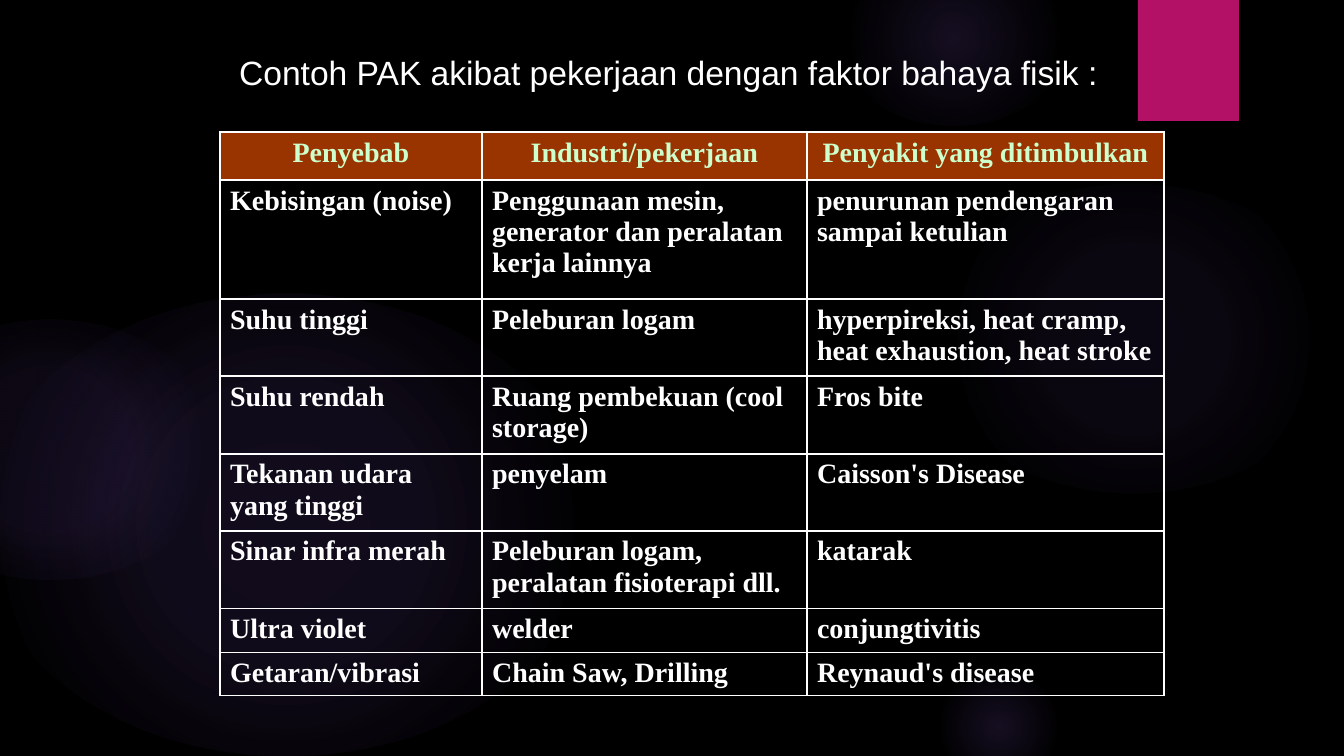
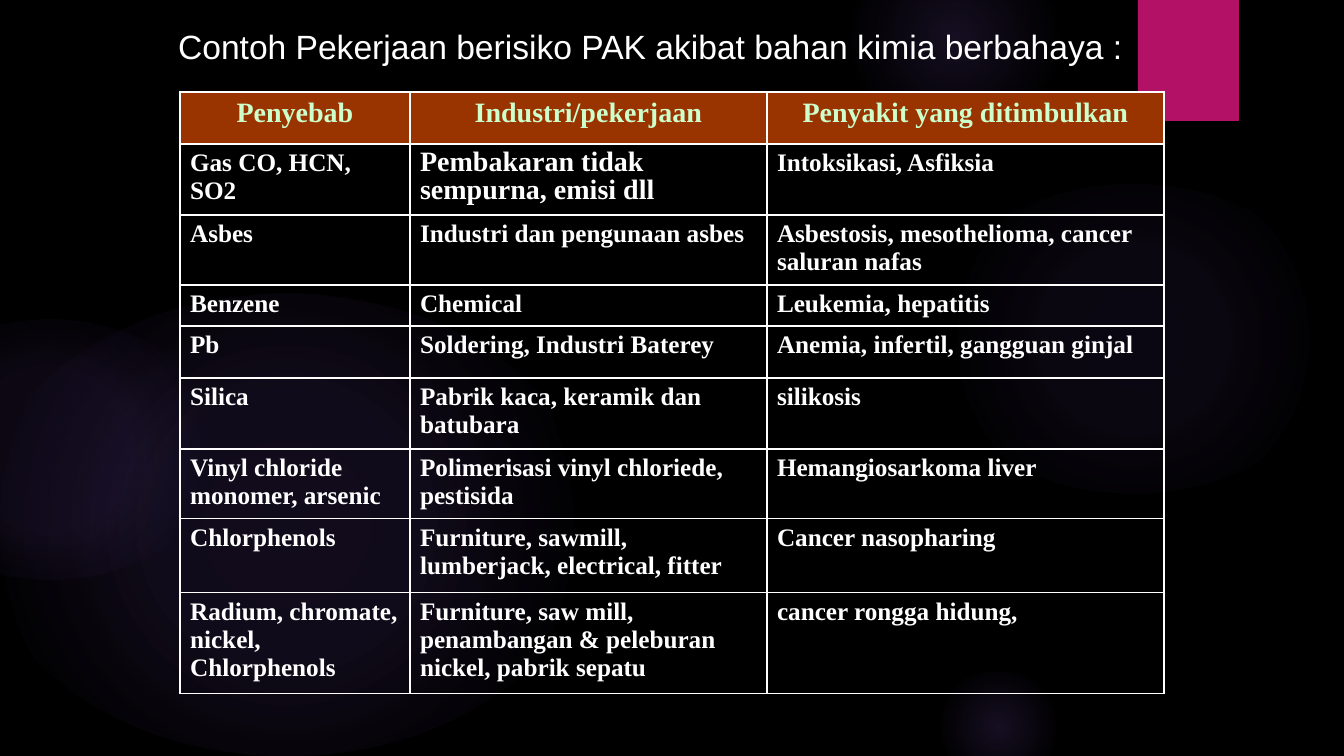
"""Build two table slides on work-related diseases over a shared dark backdrop."""
import lxml.etree
import pptx
import pptx.dml.color
import pptx.enum.shapes
import pptx.enum.text
import pptx.oxml.ns
import pptx.util

PAGE_W, PAGE_H = 1344, 756
EMU_PER_PX = 12192000 / PAGE_W

BLACK, WHITE = "000000", "FFFFFF"
GLOW, ACCENT = "9B6BF2", "B31166"
HEAD_FILL, HEAD_TEXT = "993300", "CCFFCC"
TITLE_FONT, TABLE_FONT = "Arial", "Times New Roman"

GLOWS = [
    ((926, 184, 414, 310), [(0, 7), (36, 6), (69, 0)]),
    ((837, -50, 235, 176), [(0, 14), (36, 7), (73, 0)]),
    ((926, 672, 145, 109), [(0, 14), (36, 7), (66, 0)]),
    ((-22, 294, 616, 462), [(0, 11), (36, 10), (75, 0)]),
    ((-123, 320, 347, 260), [(0, 8), (36, 8), (72, 0)]),
]
ACCENT_BAND = (1138, 0, 101, 121)

HEADER = ("Penyebab", "Industri/pekerjaan", "Penyakit yang ditimbulkan")
PAGES = [
    {
        "title": "Contoh PAK akibat pekerjaan dengan faktor bahaya fisik :",
        "title_box": (229, 47, 947, 51),
        "table_at": (220, 132),
        "columns": (262, 325, 357),
        "heights": (48, 119, 77, 78, 77, 78, 44, 43),
        "size": 20,
        "tight_cell": None,
        "rows": [
            ("Kebisingan (noise)", "Penggunaan mesin, generator dan peralatan kerja lainnya",
             "penurunan pendengaran sampai ketulian"),
            ("Suhu tinggi", "Peleburan logam", "hyperpireksi, heat cramp, heat exhaustion, heat stroke"),
            ("Suhu rendah", "Ruang pembekuan (cool storage)", "Fros bite"),
            ("Tekanan udara yang tinggi", "penyelam", "Caisson's Disease"),
            ("Sinar infra merah", "Peleburan logam, peralatan fisioterapi dll.", "katarak"),
            ("Ultra violet", "welder", "conjungtivitis"),
            ("Getaran/vibrasi", "Chain Saw, Drilling", "Reynaud's disease"),
        ],
    },
    {
        "title": "Contoh Pekerjaan berisiko PAK akibat bahan kimia berbahaya :",
        "title_box": (168, 21, 1008, 51),
        "table_at": (180, 92),
        "columns": (230, 357, 397),
        "heights": (52, 71, 70, 41, 52, 71, 70, 74, 101),
        "size": 18,
        "tight_cell": (1, 1),
        "rows": [
            ("Gas CO, HCN, SO2", "Pembakaran tidak sempurna, emisi dll", "Intoksikasi, Asfiksia"),
            ("Asbes", "Industri dan pengunaan asbes", "Asbestosis, mesothelioma, cancer saluran nafas"),
            ("Benzene", "Chemical", "Leukemia, hepatitis"),
            ("Pb", "Soldering, Industri Baterey", "Anemia, infertil, gangguan ginjal"),
            ("Silica", "Pabrik kaca, keramik dan batubara", "silikosis"),
            ("Vinyl chloride monomer, arsenic", "Polimerisasi vinyl chloriede, pestisida",
             "Hemangiosarkoma liver"),
            ("Chlorphenols", "Furniture, sawmill, lumberjack, electrical, fitter", "Cancer nasopharing"),
            ("Radium, chromate, nickel, Chlorphenols",
             "Furniture, saw mill, penambangan & peleburan nickel, pabrik sepatu", "cancer rongga hidung,"),
        ],
    },
]


def px(length):
    return pptx.util.Emu(round(length * EMU_PER_PX))


def rgb(value):
    return pptx.dml.color.RGBColor.from_string(value)


def node(parent, tag, **attributes):
    child = lxml.etree.SubElement(parent, pptx.oxml.ns.qn(tag))
    for name, value in attributes.items():
        child.set(name, str(value))
    return child


def color_node(parent, value, percent=100):
    color = node(parent, "a:srgbClr", val=value)
    if percent < 100:
        node(color, "a:alpha", val=percent * 1000)


def add_span(para, text, font, size, color, bold=False):
    span = para.add_run()
    span.text = text
    span.font.name = font
    span.font.size = pptx.util.Pt(size)
    span.font.bold = bold
    span.font.color.rgb = rgb(color)


def add_plain(page, kind, box):
    shape = page.shapes.add_shape(kind, *map(px, box))
    shape.shadow.inherit = False
    shape.line.fill.background()
    return shape


def add_glow(page, box, stops):
    shape = add_plain(page, pptx.enum.shapes.MSO_SHAPE.OVAL, box)
    properties = shape.element.spPr
    gradient = node(properties, "a:gradFill", rotWithShape=1)
    stop_list = node(gradient, "a:gsLst")
    for position, percent in stops:
        color_node(node(stop_list, "a:gs", pos=position * 1000), GLOW, percent)
    circle = node(gradient, "a:path", path="circle")
    node(circle, "a:fillToRect", l=50000, t=50000, r=50000, b=50000)
    properties.insert(2, gradient)
    return shape


def add_accent(page):
    shape = add_plain(page, pptx.enum.shapes.MSO_SHAPE.RECTANGLE, ACCENT_BAND)
    shape.fill.solid()
    shape.fill.fore_color.rgb = rgb(ACCENT)
    effects = shape.element.spPr.find(pptx.oxml.ns.qn("a:effectLst"))
    shadow = node(effects, "a:outerShdw", blurRad=38100, dist=25400, dir=5400000, rotWithShape=0)
    color_node(shadow, BLACK, 45)
    return shape


def decorate_layout(layout, page):
    layout.background.fill.solid()
    layout.background.fill.fore_color.rgb = rgb(BLACK)
    decor = [add_glow(page, box, stops) for box, stops in GLOWS] + [add_accent(page)]
    for order, shape in enumerate(decor):
        shape.element.xpath(".//p:cNvPr")[0].set("id", str(100 + order))
        layout.shapes.element.insert(2 + order, shape.element)


def set_title(page, text, box):
    title = page.shapes.title
    title.left, title.top, title.width, title.height = map(px, box)
    frame = title.text_frame
    frame.word_wrap = True
    frame.auto_size = pptx.enum.text.MSO_AUTO_SIZE.NONE
    frame.vertical_anchor = pptx.enum.text.MSO_ANCHOR.MIDDLE
    para = frame.paragraphs[0]
    para.alignment = pptx.enum.text.PP_ALIGN.LEFT
    add_span(para, text, TITLE_FONT, 24, WHITE)


def set_borders(cell):
    properties = cell._tc.get_or_add_tcPr()
    for order, side in enumerate(("a:lnL", "a:lnR", "a:lnT", "a:lnB")):
        line = node(properties, side, w=12700)
        color_node(node(line, "a:solidFill"), WHITE)
        properties.insert(order, line)


def fill_cell(cell, text, size, is_header, is_tight):
    para = cell.text_frame.paragraphs[0]
    if is_header:
        cell.fill.solid()
        cell.fill.fore_color.rgb = rgb(HEAD_FILL)
        para.alignment = pptx.enum.text.PP_ALIGN.CENTER
    else:
        cell.fill.background()
    if is_tight:
        para.line_spacing = 0.9
    add_span(para, text, TABLE_FONT, 20 if is_header or is_tight else size,
             HEAD_TEXT if is_header else WHITE, True)
    set_borders(cell)


def add_disease_table(page, content):
    rows = [HEADER] + content["rows"]
    columns, heights = content["columns"], content["heights"]
    box = (*content["table_at"], sum(columns), sum(heights))
    table = page.shapes.add_table(len(rows), len(columns), *map(px, box)).table
    table.first_row = table.horz_banding = False
    for column, width in zip(table.columns, columns):
        column.width = px(width)
    for row, height in zip(table.rows, heights):
        row.height = px(height)
    for r, texts in enumerate(rows):
        for c, text in enumerate(texts):
            fill_cell(table.cell(r, c), text, content["size"], r == 0, (r, c) == content["tight_cell"])


def main():
    deck = pptx.Presentation()
    deck.slide_width, deck.slide_height = px(PAGE_W), px(PAGE_H)
    layout = deck.slide_layouts[5]
    pages = [deck.slides.add_slide(layout) for _ in PAGES]
    decorate_layout(layout, pages[0])
    for page, content in zip(pages, PAGES):
        set_title(page, content["title"], content["title_box"])
        add_disease_table(page, content)
    deck.save("out.pptx")


if __name__ == "__main__":
    main()
